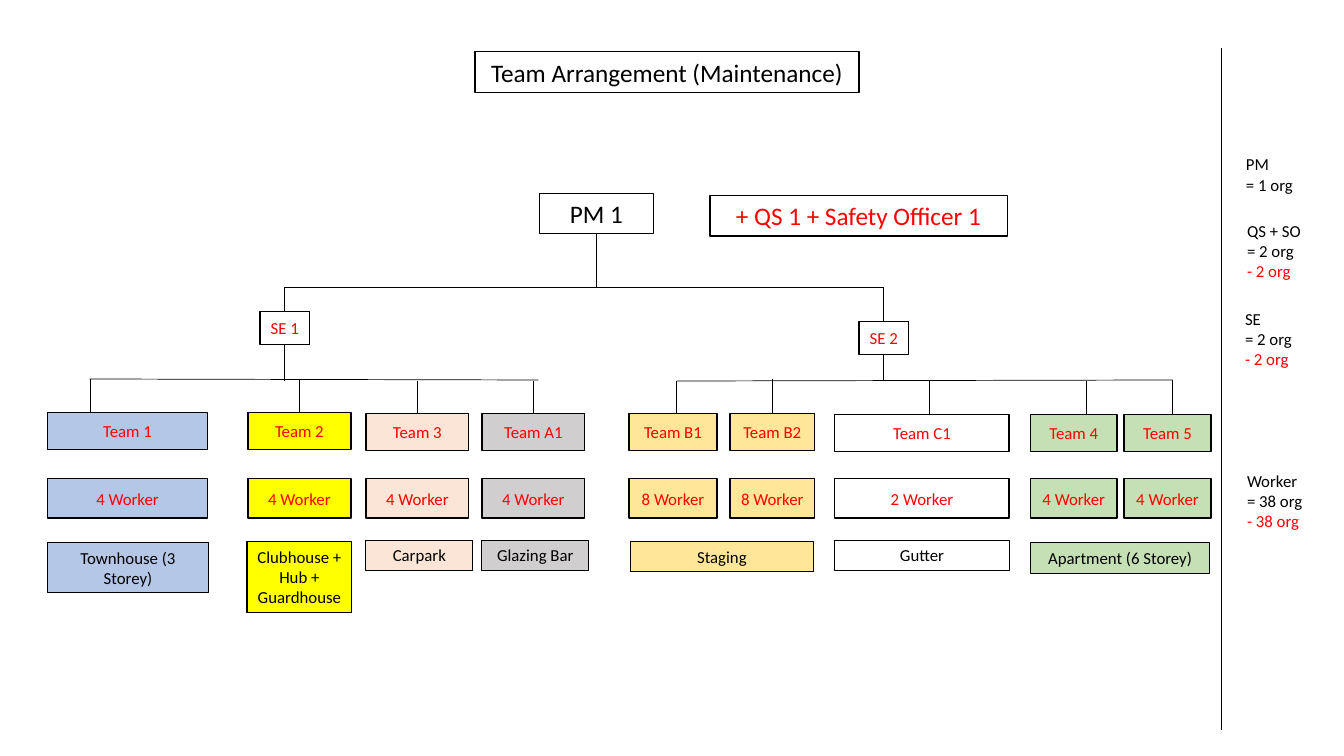
from dataclasses import dataclass

from lxml.etree import SubElement
from pptx import Presentation
from pptx.dml.color import RGBColor as Rgb
from pptx.enum.shapes import MSO_CONNECTOR as Conn, MSO_SHAPE as Form
from pptx.enum.text import MSO_ANCHOR as Anchor, MSO_AUTO_SIZE as Fit, PP_ALIGN as Align
from pptx.oxml.ns import qn
from pptx.util import Pt

SCALE = 9144  # EMU per px, 100 px to the inch
TOP, BOTTOM = 0, 2


@dataclass(frozen=True)
class Theme:
    font: str = "Calibri"
    ink: str = "000000"
    red: str = "FF0000"
    blue: str = "B4C7E7"
    yellow: str = "FFFF00"
    peach: str = "FBE5D6"
    grey: str = "D0CECE"
    gold: str = "FFE699"
    green: str = "C5E0B4"
    large: int = 18
    small: int = 12
    rule: float = 0.5
    thin: float = 0.75
    edge: float = 1


def px(*sizes):
    return [round(size * SCALE) for size in sizes]


def write(frame, text, font, size, color, align=Align.CENTER, anchor=Anchor.MIDDLE,
          wrap=True, last=None):
    """Fill a text frame, one paragraph a line; last recolours lines that start with a minus."""
    frame.auto_size = Fit.NONE
    frame.word_wrap = wrap
    frame.vertical_anchor = anchor
    for i, line in enumerate(text.split("\n")):
        para = frame.add_paragraph() if i else frame.paragraphs[0]
        para.alignment = align
        run = para.add_run()
        run.text = line
        run.font.name = font
        run.font.size = Pt(size)
        tint = last if last and line.startswith("-") else color
        run.font.color.rgb = Rgb.from_string(tint)


class Chart:
    def __init__(self, slide, theme):
        self.slide, self.theme = slide, theme

    def style(self, shape, fill, width):
        if fill:
            shape.fill.solid()
            shape.fill.fore_color.rgb = Rgb.from_string(fill)
        else:
            shape.fill.background()
        shape.line.color.rgb = Rgb.from_string(self.theme.ink)
        shape.line.width = Pt(width)

    def title(self, text, x, y, w, h):
        shape = self.slide.shapes.title
        shape.left, shape.top, shape.width, shape.height = px(x, y, w, h)
        self.style(shape, None, self.theme.edge)
        write(shape.text_frame, text, self.theme.font, self.theme.large, self.theme.ink)

    def box(self, text, x, y, w, h, fill=None, size=None, color=None, edge=None, **form):
        look = self.theme
        shape = self.slide.shapes.add_shape(Form.RECTANGLE, *px(x, y, w, h))
        shape.shadow.inherit = False
        self.style(shape, fill, edge or look.edge)
        write(shape.text_frame, text, look.font, size or look.small, color or look.red, **form)
        return shape

    def note(self, text, x, y, w, h):
        look = self.theme
        shape = self.slide.shapes.add_textbox(*px(x, y, w, h))
        write(shape.text_frame, text, look.font, look.small, look.ink,
              align=Align.LEFT, anchor=Anchor.TOP, last=look.red)

    def line(self, x1, y1, x2, y2, start=None, end=None):
        """Draw a line; start and end are (shape, side) pairs to join."""
        link = self.slide.shapes.add_connector(Conn.STRAIGHT, *px(x1, y1, x2, y2))
        link.line.color.rgb = Rgb.from_string(self.theme.ink)
        link.line.width = Pt(self.theme.rule)
        SubElement(link._element.spPr, qn("a:effectLst"))
        if start:
            link.begin_connect(*start)
        if end:
            link.end_connect(*end)


def main():
    deck = Presentation()
    deck.slide_width, deck.slide_height = px(1333, 750)
    look = Theme()
    chart = Chart(deck.slides.add_slide(deck.slide_layouts[5]), look)

    chart.title("Team Arrangement (Maintenance)", 471, 51, 381, 41)
    lead = chart.box("PM 1", 535, 192, 113, 40, size=look.large, color=look.ink)
    chart.box("+ QS 1 + Safety Officer 1", 704, 194, 295, 40, size=look.large)

    # Site engineers hang from the lead's bar
    bar = 285
    chart.line(591.5, 232, 591.5, bar, start=(lead, BOTTOM))
    chart.line(282, bar, 876, bar)
    for name, x, y, foot in (("SE 1", 258, 309, 378), ("SE 2", 852, 319, 377)):
        head = chart.box(name, x, y, 49, 33, wrap=False)
        mid = x + 24.5
        chart.line(mid, bar, mid, y, end=(head, TOP))
        chart.line(mid, y + 33, mid, foot, start=(head, BOTTOM))

    # Each team: name, crew, left, top, width, fill, top and x of its drop
    teams = (
        ("Team 1", 4, 47, 409, 159, look.blue, 376, 90),
        ("Team 2", 4, 246, 409, 102, look.yellow, 376, 299),
        ("Team 3", 4, 363, 410, 102, look.peach, 378, 414),
        ("Team A1", 4, 478, 410, 102, look.grey, 378, 530),
        ("Team B1", 8, 624, 410, 87, look.gold, 378, 671),
        ("Team B2", 8, 724, 410, 84, look.gold, 376, 767),
        ("Team C1", 2, 828, 411, 173, None, 378, 922),
        ("Team 4", 4, 1022, 411, 86, look.green, 378, 1077),
        ("Team 5", 4, 1115, 411, 86, look.green, 377, 1163),
    )
    chart.line(89, 376, 534, 377)
    chart.line(671, 378, 1163, 377)
    for name, crew, x, y, w, fill, high, drop in teams:
        team = chart.box(name, x, y, w, 37, fill)
        chart.box(f"{crew} Worker", x, 475, w, 39, fill)
        mid = x + w / 2
        if abs(drop - mid) <= 2:
            chart.line(mid, high, mid, y, end=(team, TOP))
        else:
            chart.line(drop, high, drop, y)

    areas = (
        ("Townhouse (3 Storey)", 47, 538, 160, 50, look.blue),
        ("Clubhouse + Hub + Guardhouse", 245, 537, 104, 71, look.yellow),
        ("Carpark", 363, 536, 106, 30, look.peach),
        ("Glazing Bar", 478, 536, 106, 30, look.grey),
        ("Staging", 625, 537, 182, 30, look.gold),
        ("Gutter", 828, 536, 173, 30, None),
        ("Apartment (6 Storey)", 1022, 538, 178, 31, look.green),
    )
    for area in areas:
        chart.box(*area, color=look.ink, edge=look.thin, anchor=Anchor.TOP)

    # Headcount column
    chart.line(1211, 48, 1211, 724)
    notes = (
        ("PM\n= 1 org", 1226, 148, 50),
        ("QS + SO\n= 2 org\n- 2 org", 1227, 214, 71),
        ("SE\n= 2 org\n- 2 org", 1225, 301, 71),
        ("Worker\n= 38 org\n- 38 org", 1227, 462, 71),
    )
    for text, x, y, h in notes:
        chart.note(text, x, y, 1333 - x, h)

    deck.save("out.pptx")


if __name__ == "__main__":
    main()
